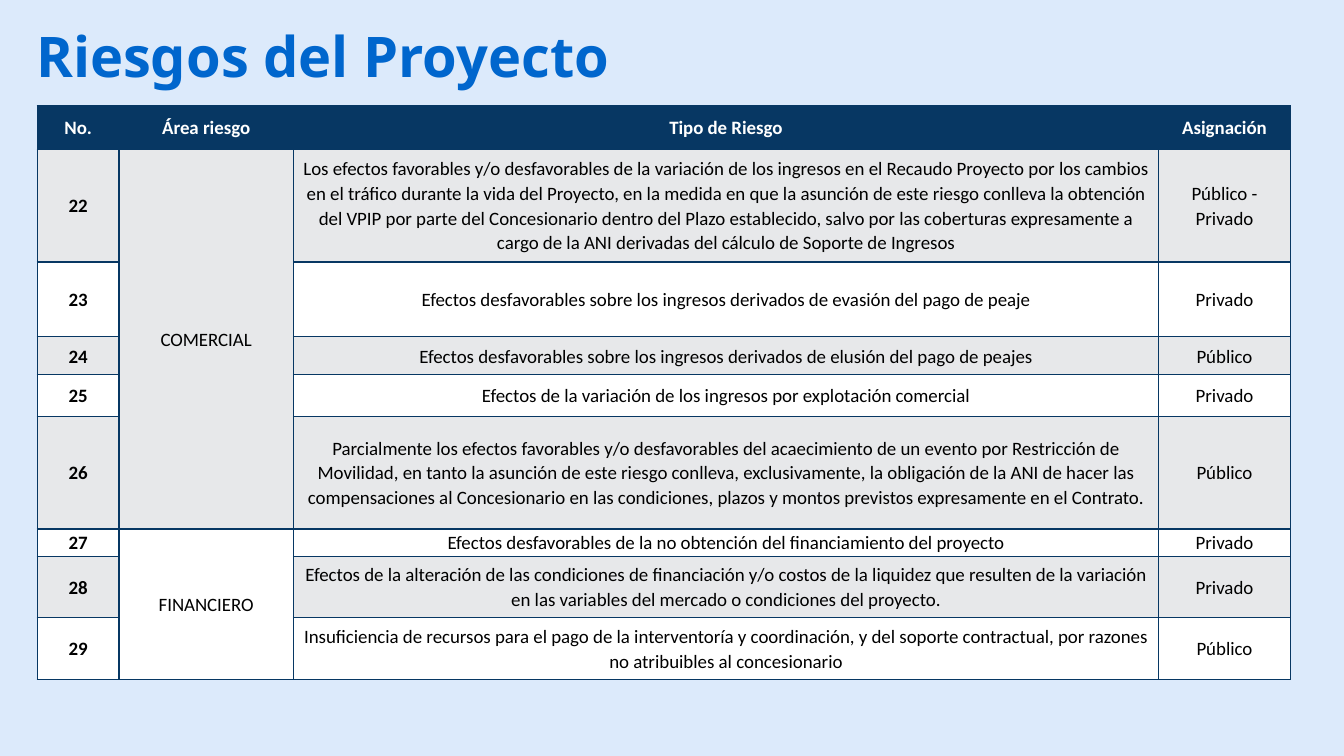
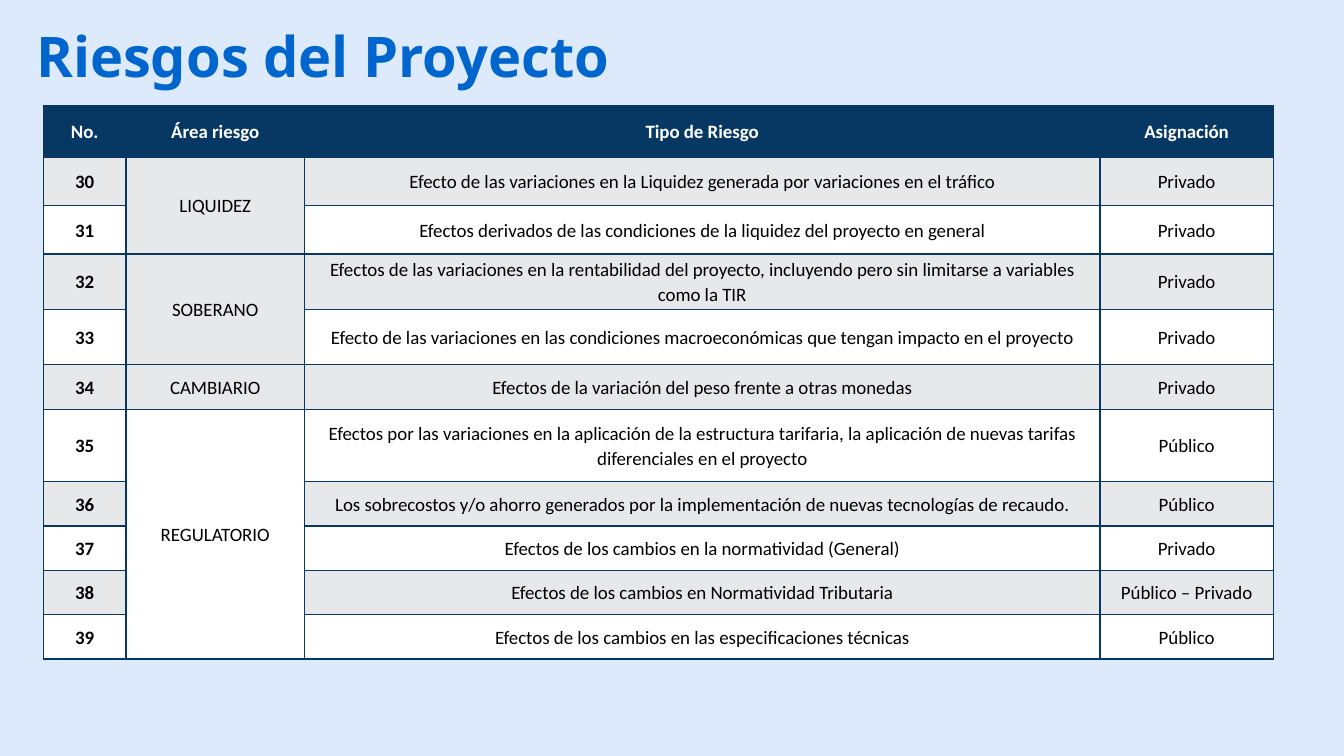
import pptx
import pptx.dml.color
import pptx.enum.text
import pptx.oxml
import pptx.oxml.ns
import pptx.util

Inches = pptx.util.Inches
Pt = pptx.util.Pt
RGBColor = pptx.dml.color.RGBColor
MIDDLE = pptx.enum.text.MSO_ANCHOR.MIDDLE
CENTER = pptx.enum.text.PP_ALIGN.CENTER

# Shared look
SKY = RGBColor(0xDC, 0xEA, 0xFB)
BLUE = RGBColor(0x00, 0x66, 0xCD)
NAVY = RGBColor(0x07, 0x37, 0x63)
GRAY = RGBColor(0xE7, 0xE8, 0xEA)
WHITE = RGBColor(0xFF, 0xFF, 0xFF)
BLACK = RGBColor(0x00, 0x00, 0x00)
TITLE = "Riesgos del Proyecto"
HEADS = ["No.", "Área riesgo", "Tipo de Riesgo", "Asignación"]

# Each area holds its risks: row height, type of risk, who bears it
FIRST = [
    ("COMERCIAL", [
        (1.12, "Los efectos favorables y/o desfavorables de la variación de los "
         "ingresos en el Recaudo Proyecto por los cambios en el tráfico durante "
         "la vida del Proyecto, en la medida en que la asunción de este riesgo "
         "conlleva la obtención del VPIP por parte del Concesionario dentro del "
         "Plazo establecido, salvo por las coberturas expresamente a cargo de la "
         "ANI derivadas del cálculo de Soporte de Ingresos", "Público - Privado"),
        (0.74, "Efectos desfavorables sobre los ingresos derivados de evasión "
         "del pago de peaje", "Privado"),
        (0.38, "Efectos desfavorables sobre los ingresos derivados de elusión "
         "del pago de peajes", "Público"),
        (0.41, "Efectos de la variación de los ingresos por explotación "
         "comercial", "Privado"),
        (1.12, "Parcialmente los efectos favorables y/o desfavorables del "
         "acaecimiento de un evento por Restricción de Movilidad, en tanto la "
         "asunción de este riesgo conlleva, exclusivamente, la obligación de la "
         "ANI de hacer las compensaciones al Concesionario en las condiciones, "
         "plazos y montos previstos expresamente en el Contrato.", "Público"),
    ]),
    ("FINANCIERO", [
        (0.27, "Efectos desfavorables de la no obtención del financiamiento "
         "del proyecto", "Privado"),
        (0.61, "Efectos de la alteración de las condiciones de financiación y/o "
         "costos de la liquidez que resulten de la variación en las variables "
         "del mercado o condiciones del proyecto.", "Privado"),
        (0.61, "Insuficiencia de recursos para el pago de la interventoría y "
         "coordinación, y del soporte contractual, por razones no atribuibles "
         "al concesionario", "Público"),
    ]),
]
SECOND = [
    ("LIQUIDEZ", [
        (0.48, "Efecto de las variaciones en la Liquidez generada por "
         "variaciones en el tráfico", "Privado"),
        (0.48, "Efectos derivados de las condiciones de la liquidez del "
         "proyecto en general", "Privado"),
    ]),
    ("SOBERANO", [
        (0.55, "Efectos de las variaciones en la rentabilidad del proyecto, "
         "incluyendo pero sin limitarse a variables como la TIR", "Privado"),
        (0.55, "Efecto de las variaciones en las condiciones macroeconómicas "
         "que tengan impacto en el proyecto", "Privado"),
    ]),
    ("CAMBIARIO", [
        (0.44, "Efectos de la variación del peso frente a otras monedas",
         "Privado"),
    ]),
    ("REGULATORIO", [
        (0.72, "Efectos por las variaciones en la aplicación de la estructura "
         "tarifaria, la aplicación de nuevas tarifas diferenciales en el "
         "proyecto", "Público"),
        (0.44, "Los sobrecostos y/o ahorro generados por la implementación de "
         "nuevas tecnologías de recaudo.", "Público"),
        (0.44, "Efectos de los cambios en la normatividad (General)", "Privado"),
        (0.44, "Efectos de los cambios en Normatividad Tributaria",
         "Público – Privado"),
        (0.44, "Efectos de los cambios en las especificaciones técnicas",
         "Público"),
    ]),
]


def add_title(slide):
    box = slide.shapes.add_textbox(
        Inches(0.26), Inches(0.12), Inches(10.48), Inches(0.93))
    frame = box.text_frame
    frame.word_wrap = True
    frame.vertical_anchor = MIDDLE
    para = frame.paragraphs[0]
    para.text = TITLE
    para.line_spacing = 0.9
    font = para.font
    font.name, font.size, font.bold = "Noto Sans", Pt(40), True
    font.color.rgb = BLUE


def add_edges(cell):
    props = cell._tc.get_or_add_tcPr()
    for side in ("L", "R", "T", "B"):
        props.append(pptx.oxml.parse_xml(
            f'<a:ln{side} {pptx.oxml.ns.nsdecls("a")} w="{Pt(1)}">'
            f'<a:solidFill><a:srgbClr val="{NAVY}"/></a:solidFill>'
            f'</a:ln{side}>'))


def style_cell(cell, fill, color, bold):
    cell.vertical_anchor = MIDDLE
    cell.margin_left = cell.margin_right = Inches(0.05)
    cell.margin_top = cell.margin_bottom = 0
    add_edges(cell)
    cell.fill.solid()
    cell.fill.fore_color.rgb = fill
    para = cell.text_frame.paragraphs[0]
    para.alignment = CENTER
    para.line_spacing = 1.07
    para.space_after = Pt(8)
    font = para.font
    font.name, font.size, font.bold = "Calibri", Pt(13.5), bold
    font.color.rgb = color


def add_risks(slide, left, widths, head, areas, start):
    # Flatten the areas into rows; only the first risk names its area
    rows, highs, spans = [HEADS], [head], []
    for area, risks in areas:
        spans.append((len(rows), len(rows) + len(risks) - 1))
        for pos, (high, risk, owner) in enumerate(risks):
            number = str(start + len(rows) - 1)
            rows.append([number, "" if pos else area, risk, owner])
            highs.append(high)

    table = slide.shapes.add_table(
        len(rows), len(widths), Inches(left), Inches(1.05),
        Inches(sum(widths)), Inches(sum(highs))).table
    table.horz_banding = False
    for col, width in zip(table.columns, widths):
        col.width = Inches(width)
    for row, high in zip(table.rows, highs):
        row.height = Inches(high)

    # Header row, then alternating bands
    for i, texts in enumerate(rows):
        fill = NAVY if i == 0 else GRAY if i % 2 else WHITE
        color = BLACK if i else WHITE
        for j, text in enumerate(texts):
            cell = table.cell(i, j)
            cell.text = text
            style_cell(cell, fill, color, i == 0 or j == 0)

    # One tall cell per area
    for top, end in spans:
        if end > top:
            table.cell(top, 1).merge(table.cell(end, 1))


def main():
    prs = pptx.Presentation()
    prs.slide_width, prs.slide_height = Inches(13.33), Inches(7.5)
    back = prs.slide_master.background.fill
    back.solid()
    back.fore_color.rgb = SKY

    pages = [
        (0.37, [0.81, 1.73, 8.58, 1.31], 0.43, FIRST, 22),
        (0.43, [0.82, 1.77, 7.89, 1.72], 0.51, SECOND, 30),
    ]
    for page in pages:
        slide = prs.slides.add_slide(prs.slide_layouts[6])
        add_risks(slide, *page)
        add_title(slide)
    prs.save("out.pptx")


if __name__ == "__main__":
    main()
